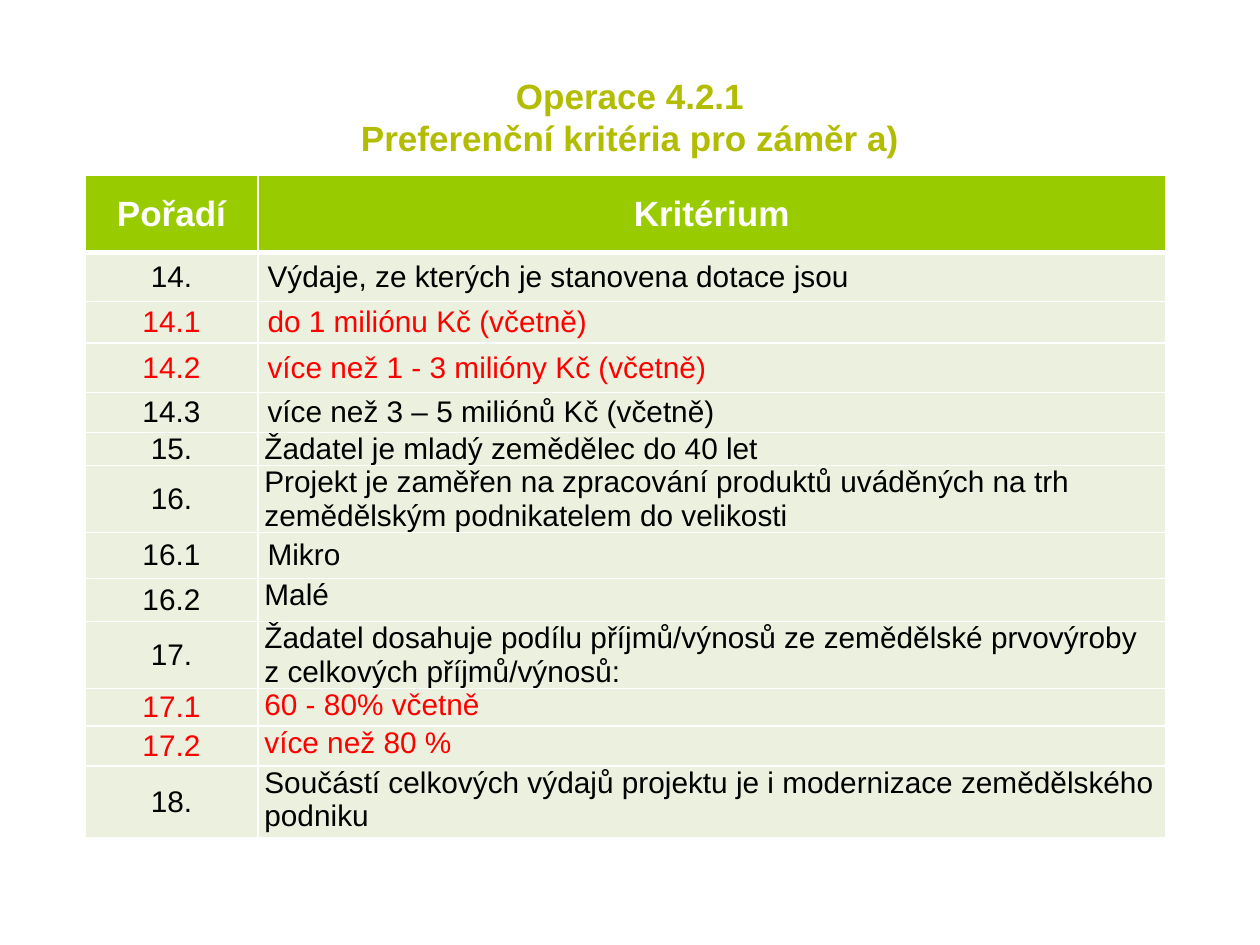
import pptx
import pptx.dml.color
import pptx.enum.text
import pptx.oxml
import pptx.oxml.ns
import pptx.util

Pt = pptx.util.Pt
ALIGN = pptx.enum.text.PP_ALIGN
ANCHOR = pptx.enum.text.MSO_ANCHOR

COLORS = {
    "title": "B2BC00",
    "header": "99CC00",
    "row": "EBF1DE",
    "white": "FFFFFF",
    "black": "000000",
    "red": "FF0000",
}
THIN, THICK = 0.91, 2.95
HEADER_HEIGHT = 44
COLUMN_WIDTHS = (99, 518.5)
HEADINGS = ("Pořadí", "Kritérium")
MIDDLE = (ANCHOR.MIDDLE, 5.4)
TOP = (ANCHOR.TOP, 3.6)

CRITERIA = [
    ("14.", "Výdaje, ze kterých je stanovena dotace jsou", "black", 28, MIDDLE),
    ("14.1", "do 1 miliónu Kč (včetně)", "red", 23.7, MIDDLE),
    ("14.2", "více než 1 - 3 milióny Kč (včetně)", "red", 28.3, MIDDLE),
    ("14.3", "více než 3 – 5 miliónů Kč (včetně)", "black", 22.7, MIDDLE),
    ("15.", "Žadatel je mladý zemědělec do 40 let", "black", 19.1, TOP),
    ("16.", "Projekt je zaměřen na zpracování produktů uváděných na trh "
            "zemědělským podnikatelem do velikosti", "black", 38, TOP),
    ("16.1", "Mikro", "black", 26.3, MIDDLE),
    ("16.2", "Malé", "black", 24.6, TOP),
    ("17.", "Žadatel dosahuje podílu příjmů/výnosů ze zemědělské prvovýroby "
            "z celkových příjmů/výnosů:", "black", 38.3, TOP),
    ("17.1", "60 - 80% včetně", "red", 21.4, TOP),
    ("17.2", "více než 80 %", "red", 22.9, TOP),
    ("18.", "Součástí celkových výdajů projektu je i modernizace zemědělského "
            "podniku", "black", 40.9, TOP),
]


def format_text(frame, size, color, bold, align):
    for paragraph in frame.paragraphs:
        paragraph.alignment = align
        for run in paragraph.runs:
            run.font.name = "Arial"
            run.font.size = Pt(size)
            run.font.bold = bold
            run.font.color.rgb = pptx.dml.color.RGBColor.from_string(COLORS[color])


def add_title(slide):
    title = slide.shapes.title
    title.left, title.top, title.width, title.height = Pt(36), Pt(21.6), Pt(648), Pt(90)
    frame = title.text_frame
    frame.text = "Operace 4.2.1\vPreferenční kritéria pro záměr a)"
    frame.vertical_anchor = ANCHOR.MIDDLE
    format_text(frame, 20, "title", True, ALIGN.CENTER)


def add_borders(cell, top, bottom):
    properties = cell._tc.get_or_add_tcPr()
    for side, width in (("L", THIN), ("R", THIN), ("T", top), ("B", bottom)):
        properties.append(pptx.oxml.parse_xml(
            f'<a:ln{side} {pptx.oxml.ns.nsdecls("a")} w="{int(Pt(width))}">'
            f'<a:solidFill><a:srgbClr val="{COLORS["white"]}"/></a:solidFill>'
            f'</a:ln{side}>'))


def fill_cell(cell, text, fill, color, size, bold, align, anchor, inset,
              padding=0, top=THIN, bottom=THIN):
    add_borders(cell, top, bottom)
    cell.fill.solid()
    cell.fill.fore_color.rgb = pptx.dml.color.RGBColor.from_string(COLORS[fill])
    cell.margin_left = cell.margin_right = Pt(inset)
    cell.margin_top = cell.margin_bottom = Pt(padding)
    cell.vertical_anchor = anchor
    cell.text_frame.text = text
    format_text(cell.text_frame, size, color, bold, align)


def add_criteria_table(slide):
    heights = [HEADER_HEIGHT] + [criterion[3] for criterion in CRITERIA]
    table = slide.shapes.add_table(
        len(heights), len(COLUMN_WIDTHS), Pt(48.5), Pt(100.4),
        Pt(sum(COLUMN_WIDTHS)), Pt(sum(heights))).table
    table.horz_banding = False
    for column, width in zip(table.columns, COLUMN_WIDTHS):
        column.width = Pt(width)
    for row, height in zip(table.rows, heights):
        row.height = Pt(height)
    for index, heading in enumerate(HEADINGS):
        fill_cell(table.cell(0, index), heading, "header", "white", 20, True,
                  ALIGN.CENTER, ANCHOR.MIDDLE, 7.2, padding=3.6, bottom=THICK)
    for index, (order, criterion, color, _, placement) in enumerate(CRITERIA, 1):
        top = THICK if index == 1 else THIN
        fill_cell(table.cell(index, 0), order, "row", color, 17, False,
                  ALIGN.CENTER, *MIDDLE, top=top)
        fill_cell(table.cell(index, 1), criterion, "row", color, 17, False,
                  ALIGN.LEFT, *placement, top=top)


def main():
    presentation = pptx.Presentation()
    presentation.slide_width, presentation.slide_height = Pt(720), Pt(540)
    slide = presentation.slides.add_slide(presentation.slide_layouts[5])
    add_title(slide)
    add_criteria_table(slide)
    presentation.save("out.pptx")


if __name__ == "__main__":
    main()
